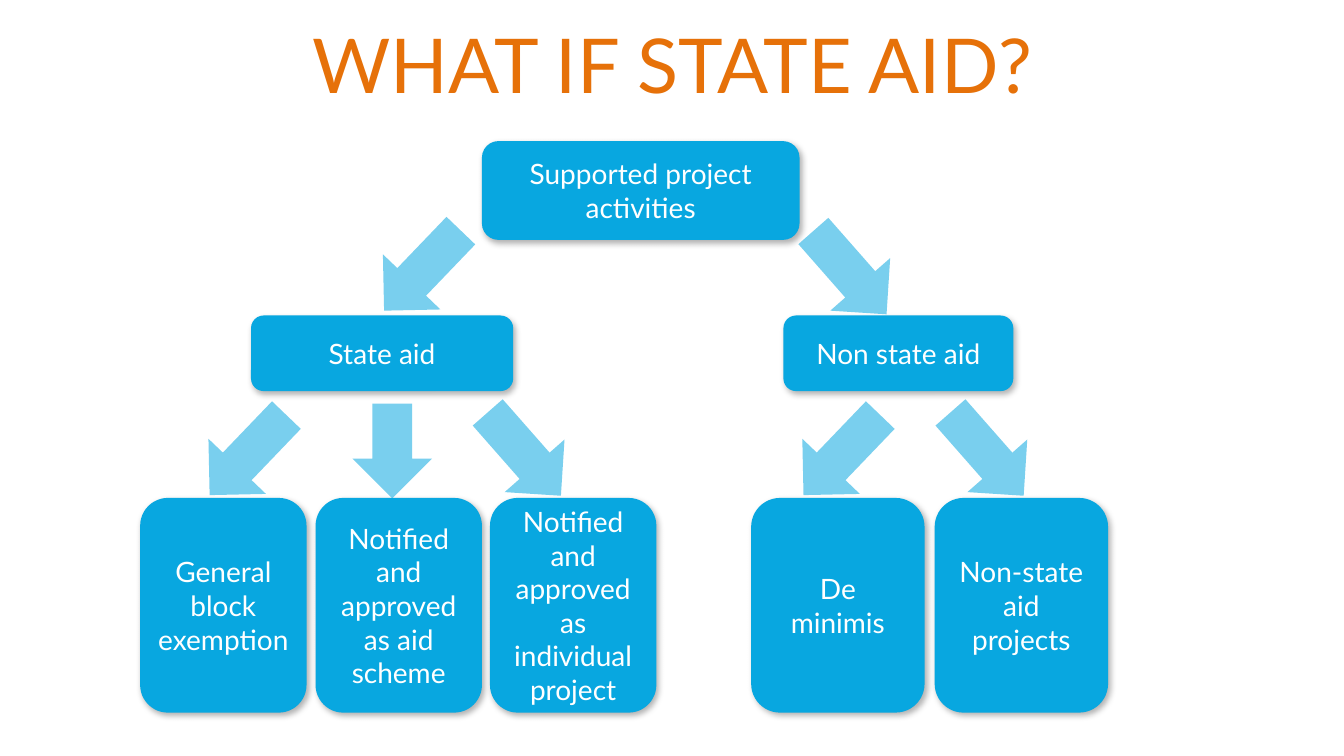
import pptx
import pptx.dml.color
import pptx.enum.shapes
import pptx.enum.text
import pptx.oxml
import pptx.oxml.ns
import pptx.util
from dataclasses import dataclass

PX = 9144  # EMU in one px, 100 px to the inch
SHAPES = pptx.enum.shapes.MSO_SHAPE
NAMESPACE = pptx.oxml.ns.nsdecls("a")


@dataclass(frozen=True)
class Theme:
    font: str = "Lato"
    title_color: str = "E67109"
    box_fill: str = "08A7E0"
    box_text: str = "FFFFFF"
    shadow: str = "000000"
    title_size: int = 54
    box_size: int = 20
    arrow_opacity: int = 54


THEME = Theme()


def px(*lengths):
    return [pptx.util.Emu(length * PX) for length in lengths]


def rgb(color):
    return pptx.dml.color.RGBColor.from_string(color)


def write_text(shape, text, *, size, color, inset=10, line_spacing=None):
    frame = shape.text_frame
    frame.word_wrap = True
    frame.vertical_anchor = pptx.enum.text.MSO_ANCHOR.MIDDLE
    frame.margin_left, frame.margin_right = px(inset, inset)
    paragraph = frame.paragraphs[0]
    paragraph.alignment = pptx.enum.text.PP_ALIGN.CENTER
    if line_spacing:
        paragraph.line_spacing = line_spacing
    run = paragraph.add_run()
    run.text = text
    run.font.name = THEME.font
    run.font.size = pptx.util.Pt(size)
    run.font.color.rgb = rgb(color)


def add_filled_shape(slide, kind, left, top, width, height):
    shape = slide.shapes.add_shape(kind, *px(left, top, width, height))
    shape.shadow.inherit = False
    shape.fill.solid()
    shape.fill.fore_color.rgb = rgb(THEME.box_fill)
    shape.line.fill.background()
    return shape


def add_soft_shadow(shape):
    effects = shape._element.spPr.find(pptx.oxml.ns.qn("a:effectLst"))
    effects.append(pptx.oxml.parse_xml(
        f'<a:outerShdw {NAMESPACE} blurRad="57150" dist="33020" dir="3180000" '
        f'algn="ctr" rotWithShape="0"><a:srgbClr val="{THEME.shadow}">'
        '<a:alpha val="30000"/></a:srgbClr></a:outerShdw>'))


def add_box(slide, text, left, top, width, height, inset=8):
    box = add_filled_shape(slide, SHAPES.ROUNDED_RECTANGLE, left, top, width, height)
    add_soft_shadow(box)
    write_text(box, text, size=THEME.box_size, color=THEME.box_text, inset=inset)


def add_arrow(slide, left, top, rotation, width=110):
    arrow = add_filled_shape(slide, SHAPES.RIGHT_ARROW, left, top, width, 79)
    arrow.rotation = rotation
    color = arrow._element.spPr.find(".//" + pptx.oxml.ns.qn("a:srgbClr"))
    color.append(pptx.oxml.parse_xml(
        f'<a:alpha {NAMESPACE} val="{THEME.arrow_opacity * 1000}"/>'))


def add_leaves(slide, texts, left, width, pitch, inset):
    for index, text in enumerate(texts):
        add_box(slide, text, left + round(index * pitch), 494, width, 213, inset)


def main():
    presentation = pptx.Presentation()
    presentation.slide_width, presentation.slide_height = px(1333, 750)
    slide = presentation.slides.add_slide(presentation.slide_layouts[6])

    # Title
    title = slide.shapes.add_textbox(*px(92, 23, 1150, 91))
    write_text(title, "WHAT IF STATE AID?", size=THEME.title_size,
               color=THEME.title_color, line_spacing=0.9)

    # Root and the two branches
    add_box(slide, "Supported project activities", 478, 140, 315, 98)
    add_box(slide, "State aid", 249, 313, 260, 75)
    add_box(slide, "Non state aid", 777, 313, 228, 75)

    # Outcomes below each branch
    add_leaves(slide, ["General block exemption",
                       "Notified and approved as aid scheme",
                       "Notified and approved as individual project"],
               left=139, width=165, pitch=173.5, inset=8)
    add_leaves(slide, ["De minimis", "Non-state aid projects"],
               left=745, width=172, pitch=182, inset=14)

    # Arrows: down to the left, down to the right, straight down
    for left, top in [(364, 229), (191, 412), (780, 412)]:
        add_arrow(slide, left, top, 133.8)
    for left, top in [(788, 231), (924, 411), (465, 411)]:
        add_arrow(slide, left, top, 48.7)
    add_arrow(slide, 342, 408, 90, width=94)

    presentation.save("out.pptx")


if __name__ == "__main__":
    main()
